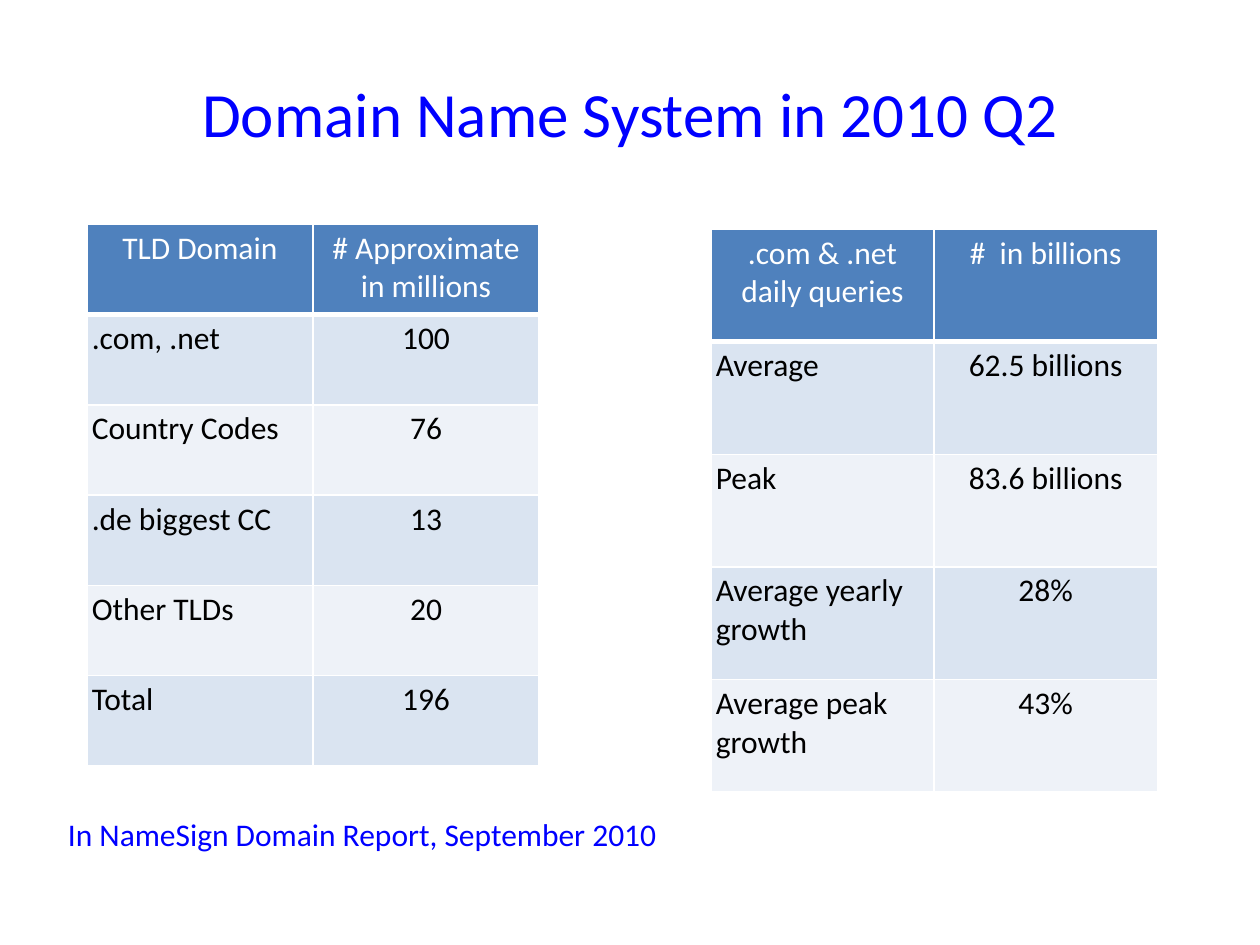
from dataclasses import dataclass

from lxml.etree import SubElement
from pptx import Presentation
from pptx.dml.color import RGBColor as RGB
from pptx.enum.text import MSO_ANCHOR as Anchor, PP_ALIGN as Align
from pptx.oxml.ns import qn
from pptx.util import Cm, Pt


@dataclass(frozen=True)
class Theme:
    font: str = "Calibri"
    title_size: int = 36
    body_size: int = 18
    accent: str = "0000FF"
    header_text: str = "FFFFFF"
    body_text: str = "000000"
    header_fill: str = "4F81BD"
    band_fills: tuple = ("DAE4F1", "EEF2F8")
    border: str = "FFFFFF"
    border_width: int = 1
    header_rule_width: int = 3
    inset: float = 0.1


THEME = Theme()

DOMAINS = [
    ("TLD Domain", "# Approximate in millions"),
    (".com, .net", "100"),
    ("Country Codes", "76"),
    (".de biggest CC", "13"),
    ("Other TLDs", "20"),
    ("Total", "196"),
]
QUERIES = [
    (".com & .net\ndaily queries", "#  in billions"),
    ("Average", "62.5 billions"),
    ("Peak", "83.6 billions"),
    ("Average yearly growth", "28%"),
    ("Average peak growth", "43%"),
]


def write_text(frame, text, size, color, align):
    frame.text = text
    frame.word_wrap = True
    for paragraph in frame.paragraphs:
        paragraph.alignment = align
        paragraph.font.name = THEME.font
        paragraph.font.size = Pt(size)
        paragraph.font.color.rgb = RGB.from_string(color)


def set_margins(target):
    for side in ("left", "top", "right", "bottom"):
        setattr(target, f"margin_{side}", Cm(THEME.inset))


def add_text(slide, text, box, size, align, anchor):
    shape = slide.shapes.add_textbox(*map(Cm, box))
    frame = shape.text_frame
    set_margins(frame)
    frame.vertical_anchor = anchor
    write_text(frame, text, size, THEME.accent, align)


def add_borders(cell, row):
    """Thin lines all round, with a heavier rule below the header."""
    widths = dict.fromkeys(("lnL", "lnR", "lnT", "lnB"), THEME.border_width)
    if row < 2:
        widths["lnT" if row else "lnB"] = THEME.header_rule_width
    properties = cell._tc.get_or_add_tcPr()
    for index, (tag, width) in enumerate(widths.items()):
        line = SubElement(properties, qn(f"a:{tag}"), w=str(Pt(width)))
        fill = SubElement(line, qn("a:solidFill"))
        SubElement(fill, qn("a:srgbClr"), val=THEME.border)
        properties.insert(index, line)


def style_cell(cell, text, row, column):
    is_header = row == 0
    fill = THEME.header_fill if is_header else THEME.band_fills[(row - 1) % 2]
    color = THEME.header_text if is_header else THEME.body_text
    align = Align.CENTER if is_header or column else Align.LEFT
    set_margins(cell)
    cell.fill.solid()
    cell.fill.fore_color.rgb = RGB.from_string(fill)
    write_text(cell.text_frame, text, THEME.body_size, color, align)
    add_borders(cell, row)


def add_data_table(slide, data, left, top, column_width, row_height):
    rows, columns = len(data), len(data[0])
    table = slide.shapes.add_table(
        rows, columns, Cm(left), Cm(top),
        Cm(column_width * columns), Cm(row_height * rows),
    ).table
    for row, values in enumerate(data):
        for column, text in enumerate(values):
            style_cell(table.cell(row, column), text, row, column)


def main():
    presentation = Presentation()
    presentation.slide_width, presentation.slide_height = Cm(25.4), Cm(19.05)
    slide = presentation.slides.add_slide(presentation.slide_layouts[6])

    # Title
    add_text(slide, "Domain Name System in 2010 Q2", (1.27, 0.1, 22.86, 4.32),
             THEME.title_size, Align.CENTER, Anchor.MIDDLE)

    # Registered domains and daily queries
    add_data_table(slide, DOMAINS, 1.75, 4.52, column_width=4.56, row_height=1.82)
    add_data_table(slide, QUERIES, 14.33, 4.62, column_width=4.5, row_height=2.27)

    # Source note
    add_text(slide, "In NameSign Domain Report, September 2010",
             (1.27, 15.54, 23.42, 1.75),
             THEME.body_size, Align.LEFT, Anchor.BOTTOM)

    presentation.save("out.pptx")


if __name__ == "__main__":
    main()
